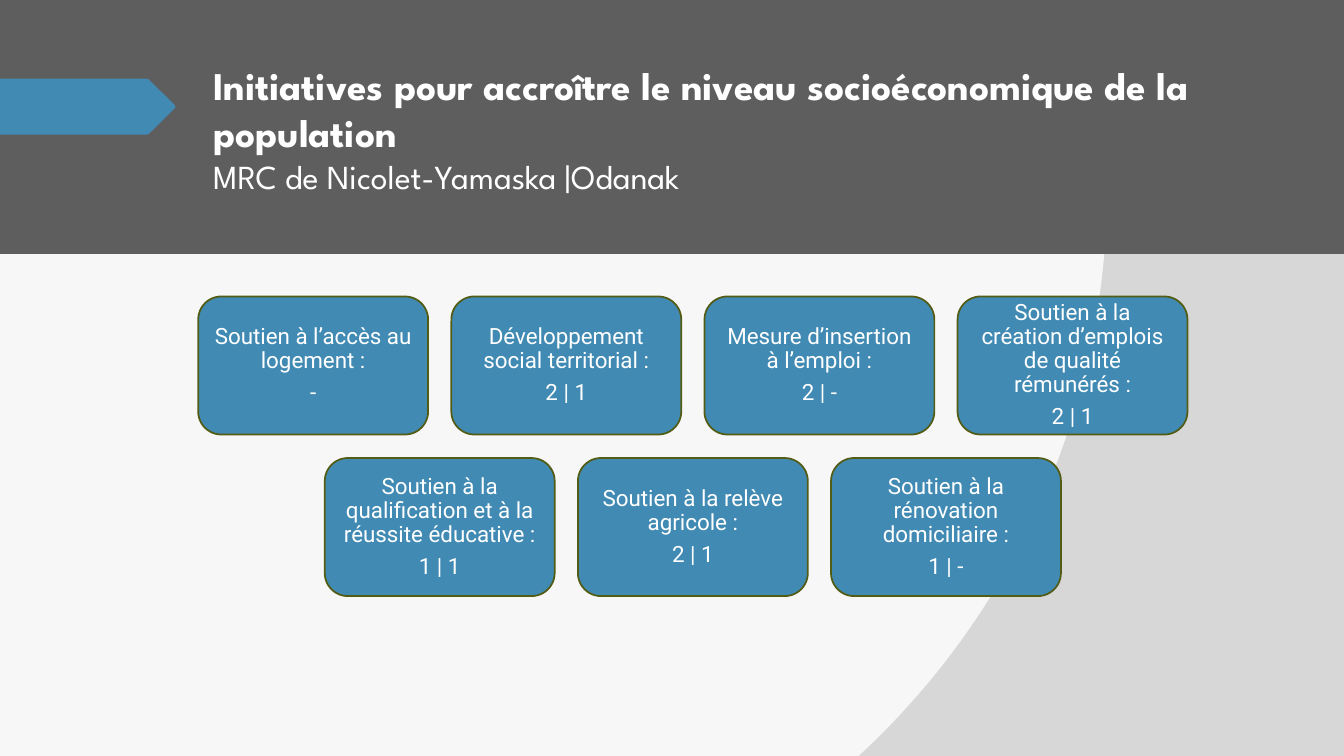
from pptx import Presentation
from pptx.dml.color import RGBColor
from pptx.enum.shapes import MSO_SHAPE as Shape
from pptx.enum.text import MSO_ANCHOR as Anchor, PP_ALIGN as Align
from pptx.oxml import parse_xml
from pptx.oxml.ns import nsdecls
from pptx.util import Pt

CHARCOAL = RGBColor(0x5E, 0x5E, 0x5E)
BLUE = RGBColor(0x41, 0x8A, 0xB3)
OLIVE = RGBColor(0x53, 0x5C, 0x14)
WHITE = RGBColor(0xFF, 0xFF, 0xFF)
PALE = RGBColor(0xF7, 0xF7, 0xF7)
SILVER = RGBColor(0xD7, 0xD7, 0xD7)

SLIDE_W, SLIDE_H = 960, 540
CARD_W, CARD_H = 164.2, 98.6
PITCH_X, PITCH_Y = 180.8, 115.4

HEADING = "Initiatives pour accroître le niveau socioéconomique de la population"
TERRITORY = "MRC de Nicolet-Yamaska |Odanak"
INITIATIVES = [
    [("Soutien à l’accès au logement :", "-"),
     ("Développement social territorial :", "2 | 1"),
     ("Mesure d’insertion à l’emploi :", "2 | -"),
     ("Soutien à la création d’emplois de qualité rémunérés :", "2 | 1")],
    [("Soutien à la qualification et à la réussite éducative :", "1 | 1"),
     ("Soutien à la relève agricole :", "2 | 1"),
     ("Soutien à la rénovation domiciliaire :", "1 | -")],
]


def apply_format(target, values):
    """Set each attribute named in values on target."""
    for name, value in values.items():
        setattr(target, name, value)


def paint(shape, color):
    """Give shape a plain fill without outline or shadow."""
    shape.shadow.inherit = False
    shape.fill.solid()
    shape.fill.fore_color.rgb = color
    shape.line.fill.background()


def add_run(paragraph, text, values):
    """Append a white run with the given font values."""
    run = paragraph.add_run()
    run.text = text
    apply_format(run.font, values)
    run.font.color.rgb = WHITE


def add_backdrop(slide):
    """Fill the background with a pale disc on silver."""
    fill = slide.background.fill
    fill.gradient()
    for stop, color in zip(fill.gradient_stops, (PALE, SILVER)):
        stop.position = 1.0
        stop.color.rgb = color
    gradient = slide.element.xpath(".//p:bgPr/a:gradFill")[0]
    for direction in gradient.xpath("a:lin"):
        gradient.remove(direction)
    gradient.append(parse_xml(
        f'<a:path {nsdecls("a")} path="circle">'
        '<a:fillToRect l="50000" t="50000" r="100000" b="100000"/></a:path>'))


def add_arrow(slide, left, top, width, height):
    """Draw the blue pointer with its slightly softened corners."""
    right, bottom, middle = left + width, top + height, top + height / 2
    shoulder = right - 19
    outline = [(shoulder - 1.5, top), (shoulder, top + 0.6),
               (right - 0.6, middle - 1.2), (right, middle),
               (right - 0.6, middle + 1.2), (shoulder, bottom - 0.6),
               (shoulder - 1.5, bottom), (left, bottom)]
    builder = slide.shapes.build_freeform(Pt(left), Pt(top))
    builder.add_line_segments([(Pt(x), Pt(y)) for x, y in outline])
    paint(builder.convert_to_shape(), BLUE)


def add_header(slide, left, top, width, height):
    """Draw the dark band with its pointer and title."""
    band = slide.shapes.add_shape(
        Shape.RECTANGLE, Pt(left), Pt(top), Pt(width), Pt(height))
    paint(band, CHARCOAL)
    title = slide.shapes.add_textbox(
        Pt(left + 145.2), Pt(top + 40.4), Pt(738.8), Pt(114.4)).text_frame
    title.word_wrap = True
    paragraph = title.paragraphs[0]
    add_run(paragraph, HEADING,
            {"name": "League Spartan", "size": Pt(28), "bold": True})
    paragraph.add_line_break()
    add_run(paragraph, TERRITORY,
            {"name": "League Spartan", "size": Pt(24), "bold": False})
    add_arrow(slide, left, top + 56.2, 125.4, 40)


def add_card(slide, left, top, initiative):
    """Draw one initiative with its counts."""
    card = slide.shapes.add_shape(
        Shape.ROUNDED_RECTANGLE, Pt(left), Pt(top), Pt(CARD_W), Pt(CARD_H))
    paint(card, BLUE)
    card.line.color.rgb = OLIVE
    card.line.width = Pt(1.25)
    frame = card.text_frame
    apply_format(frame, {
        "word_wrap": True, "vertical_anchor": Anchor.MIDDLE,
        "margin_left": Pt(6), "margin_right": Pt(6),
        "margin_top": Pt(5), "margin_bottom": Pt(5)})
    for index, text in enumerate(initiative):
        paragraph = frame.add_paragraph() if index else frame.paragraphs[0]
        apply_format(paragraph, {"alignment": Align.CENTER,
                                 "line_spacing": 0.9, "space_after": Pt(5.6)})
        add_run(paragraph, text, {"name": "Roboto", "size": Pt(16)})


def add_cards(slide, left, top, width):
    """Lay out the rows of initiatives, each centred in the width."""
    for row, initiatives in enumerate(INITIATIVES):
        row_width = PITCH_X * (len(initiatives) - 1) + CARD_W
        start = left + (width - row_width) / 2
        for column, initiative in enumerate(initiatives):
            add_card(slide, start + column * PITCH_X,
                     top + row * PITCH_Y, initiative)


def main():
    """Build and save the presentation."""
    deck = Presentation()
    deck.slide_width, deck.slide_height = Pt(SLIDE_W), Pt(SLIDE_H)
    slide = deck.slides.add_slide(deck.slide_layouts[6])
    add_backdrop(slide)
    add_header(slide, 0, 0, SLIDE_W, 181.4)
    add_cards(slide, 141.6, 211.8, 706.6)
    deck.save("out.pptx")


if __name__ == "__main__":
    main()
